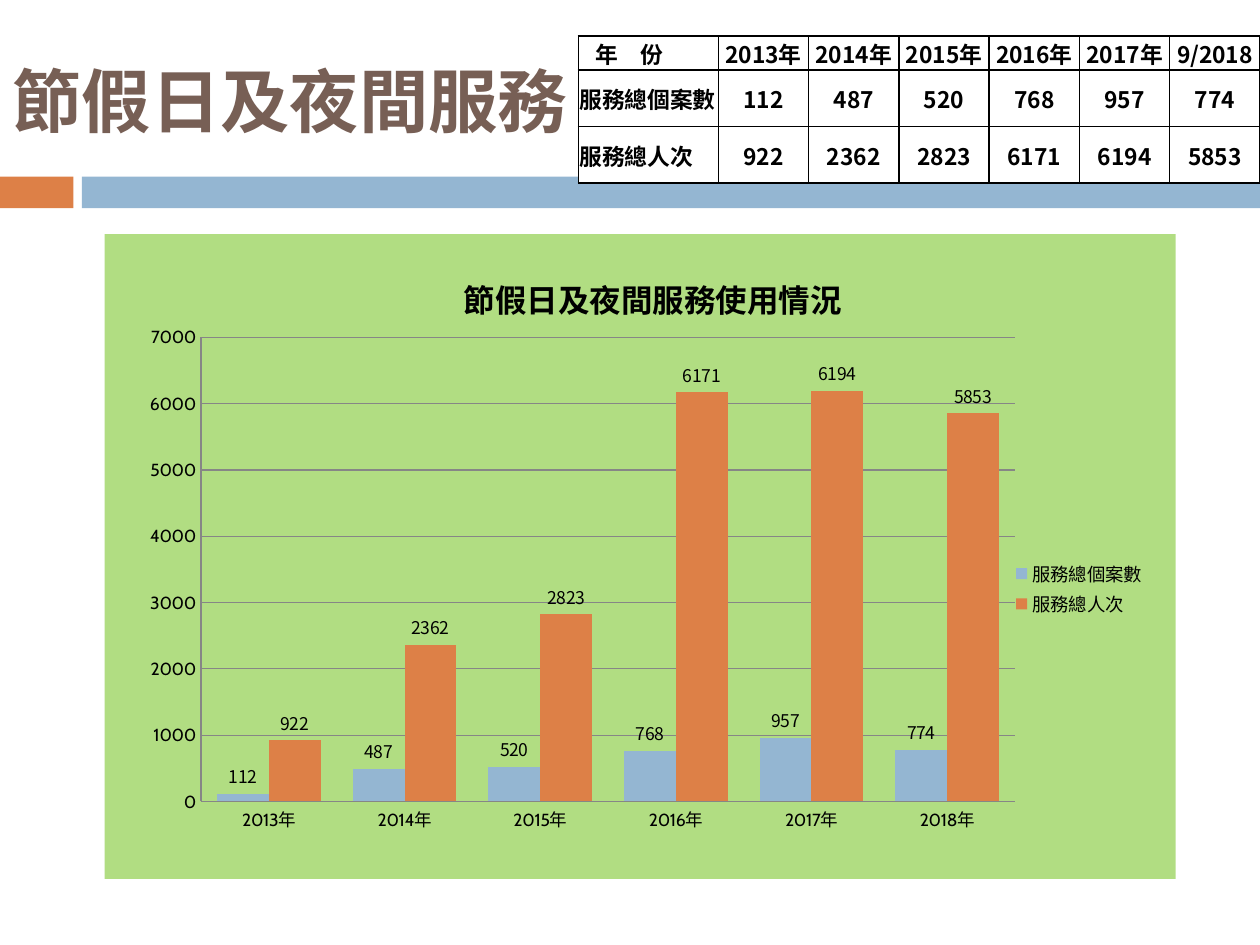
from lxml import etree
from pptx import Presentation
from pptx.chart.data import CategoryChartData
from pptx.dml.color import RGBColor
from pptx.enum.chart import XL_CHART_TYPE, XL_LABEL_POSITION, XL_LEGEND_POSITION, XL_TICK_MARK
from pptx.enum.shapes import MSO_SHAPE
from pptx.enum.text import MSO_ANCHOR, PP_ALIGN
from pptx.oxml import parse_xml
from pptx.oxml.ns import nsdecls, qn
from pptx.util import Cm, Pt

# Content
TITLE = "節假日及夜間服務"
CHART_TITLE = "節假日及夜間服務使用情況"
YEARS = ["2013年", "2014年", "2015年", "2016年", "2017年"]
SERVICE = {
    "服務總個案數": ([112, 487, 520, 768, 957, 774], "blue"),
    "服務總人次": ([922, 2362, 2823, 6171, 6194, 5853], "orange"),
}
TABLE_ROWS = [["年　份", *YEARS, "9/2018"]]
TABLE_ROWS += [[name, *map(str, values)] for name, (values, _) in SERVICE.items()]

COLORS = {"blue": "94B6D2", "orange": "DD8047", "brown": "775F55",
          "green": "92D050", "grid": "868686", "black": "000000", "white": "FFFFFF"}
LATIN, CJK = "Cabin", "Noto Sans CJK SC"

# Geometry in cm
BANDS = [(0, 1.48, "orange"), (1.65, 23.75, "blue")]
TABLE_LEFT, TABLE_TOP = 11.66, 0.73
COLUMN_WIDTHS = [2.82] + [1.82] * 6
ROW_HEIGHTS = [0.68, 1.14, 1.14]


def rgb(name):
    return RGBColor.from_string(COLORS[name])


def style_font(font, size, color="black", bold=False, latin=LATIN):
    font.size, font.bold, font.name = Pt(size), bold, latin
    font.color.rgb = rgb(color)
    east_asian = etree.Element(qn("a:ea"), typeface=CJK)
    font._element.find(qn("a:latin")).addnext(east_asian)


def add_borders(cell):
    properties = cell._tc.get_or_add_tcPr()
    for side in ("lnL", "lnR", "lnT", "lnB"):
        properties.append(parse_xml(
            f'<a:{side} {nsdecls("a")} w="12700"><a:solidFill>'
            f'<a:srgbClr val="{COLORS["black"]}"/></a:solidFill></a:{side}>'))


def place(element, inner=False, **fractions):
    """Give a chart part a manual layout as fractions of the chart."""
    old = element.find(qn("c:layout"))
    if old is not None:
        element.remove(old)
    target = '<c:layoutTarget val="inner"/>' if inner else ""
    modes = "".join(f'<c:{axis}Mode val="edge"/>' for axis in "xy")
    values = "".join(f'<c:{key} val="{value}"/>' for key, value in fractions.items())
    layout = parse_xml(f'<c:layout {nsdecls("c")}><c:manualLayout>{target}{modes}{values}'
                       '</c:manualLayout></c:layout>')
    overlay = element.find(qn("c:overlay"))
    if overlay is None:
        element.insert(0, layout)
    else:
        overlay.addprevious(layout)


def add_title(slide):
    title = slide.shapes.title
    title.left, title.top, title.width, title.height = Cm(0), Cm(0.91), Cm(11.81), Cm(2.21)
    frame = title.text_frame
    frame.text = TITLE
    frame.vertical_anchor = MSO_ANCHOR.MIDDLE
    frame.paragraphs[0].alignment = PP_ALIGN.LEFT
    style_font(frame.paragraphs[0].runs[0].font, 39.6, "brown", True)


def add_bands(slide):
    for left, width, color in BANDS:
        band = slide.shapes.add_shape(MSO_SHAPE.RECTANGLE, Cm(left), Cm(3.56), Cm(width), Cm(0.64))
        band.shadow.inherit = False
        band.fill.solid()
        band.fill.fore_color.rgb = rgb(color)
        band.line.fill.background()


def add_service_chart(slide):
    data = CategoryChartData()
    data.categories = YEARS + ["2018年"]
    for name, (values, _) in SERVICE.items():
        data.add_series(name, values)
    chart = slide.shapes.add_chart(XL_CHART_TYPE.COLUMN_CLUSTERED, Cm(2.11), Cm(4.72),
                                   Cm(21.59), Cm(13), data).chart
    style_font(chart.font, 10)

    # Translucent background
    chart._chartSpace.find(qn("c:chart")).addnext(parse_xml(
        f'<c:spPr {nsdecls("c", "a")}><a:solidFill><a:srgbClr val="{COLORS["green"]}">'
        '<a:alpha val="71000"/></a:srgbClr></a:solidFill><a:ln><a:noFill/></a:ln></c:spPr>'))

    # Columns and their labels
    plot = chart.plots[0]
    plot.gap_width, plot.overlap, plot.vary_by_categories = 62, 0, False
    for series, (_, color) in zip(plot.series, SERVICE.values()):
        series.format.fill.solid()
        series.format.fill.fore_color.rgb = rgb(color)
    plot.has_data_labels = True
    labels = plot.data_labels
    labels.show_value, labels.position = True, XL_LABEL_POSITION.OUTSIDE_END
    style_font(labels.font, 10, latin=CJK)

    # Axes
    for axis in (chart.category_axis, chart.value_axis):
        axis.major_tick_mark = axis.minor_tick_mark = XL_TICK_MARK.NONE
        axis.format.line.color.rgb = rgb("grid")
        style_font(axis.tick_labels.font, 10)
    values = chart.value_axis
    values.minimum_scale, values.maximum_scale, values.major_unit = 0, 7000, 1000
    values.major_gridlines.format.line.color.rgb = rgb("grid")

    # Title and legend
    chart.has_title = True
    heading = chart.chart_title.text_frame
    heading.text = CHART_TITLE
    style_font(heading.paragraphs[0].runs[0].font, 18, bold=True, latin=CJK)
    chart.has_legend = True
    chart.legend.position = XL_LEGEND_POSITION.RIGHT
    chart.legend.include_in_layout = False
    style_font(chart.legend.font, 10.5, latin=CJK)

    place(chart.chart_title._element, x=0.33, y=0.05)
    place(chart.legend._element, x=0.84, y=0.5, w=0.14, h=0.1)
    place(chart._chartSpace.find(".//" + qn("c:plotArea")), inner=True,
          x=0.09, y=0.16, w=0.76, h=0.72)


def add_service_table(slide):
    table = slide.shapes.add_table(len(ROW_HEIGHTS), len(COLUMN_WIDTHS), Cm(TABLE_LEFT),
                                   Cm(TABLE_TOP), Cm(sum(COLUMN_WIDTHS)),
                                   Cm(sum(ROW_HEIGHTS))).table
    for column, width in zip(table.columns, COLUMN_WIDTHS):
        column.width = Cm(width)
    for row, height in zip(table.rows, ROW_HEIGHTS):
        row.height = Cm(height)
    for r, texts in enumerate(TABLE_ROWS):
        for c, text in enumerate(texts):
            cell = table.cell(r, c)
            cell.text = text
            cell.vertical_anchor = MSO_ANCHOR.MIDDLE
            cell.margin_left = Cm(0.34 if r == c == 0 else 0.02)
            cell.margin_right = cell.margin_top = Cm(0.02)
            cell.margin_bottom = 0
            add_borders(cell)
            cell.fill.solid()
            cell.fill.fore_color.rgb = rgb("white")
            paragraph = cell.text_frame.paragraphs[0]
            paragraph.alignment = PP_ALIGN.CENTER if c else PP_ALIGN.LEFT
            style_font(paragraph.runs[0].font, 13, bold=True, latin=CJK)


def main():
    presentation = Presentation()
    presentation.slide_width, presentation.slide_height = Cm(25.4), Cm(19.05)
    slide = presentation.slides.add_slide(presentation.slide_layouts[5])
    add_bands(slide)
    add_title(slide)
    add_service_chart(slide)
    add_service_table(slide)
    presentation.save("out.pptx")


if __name__ == "__main__":
    main()
